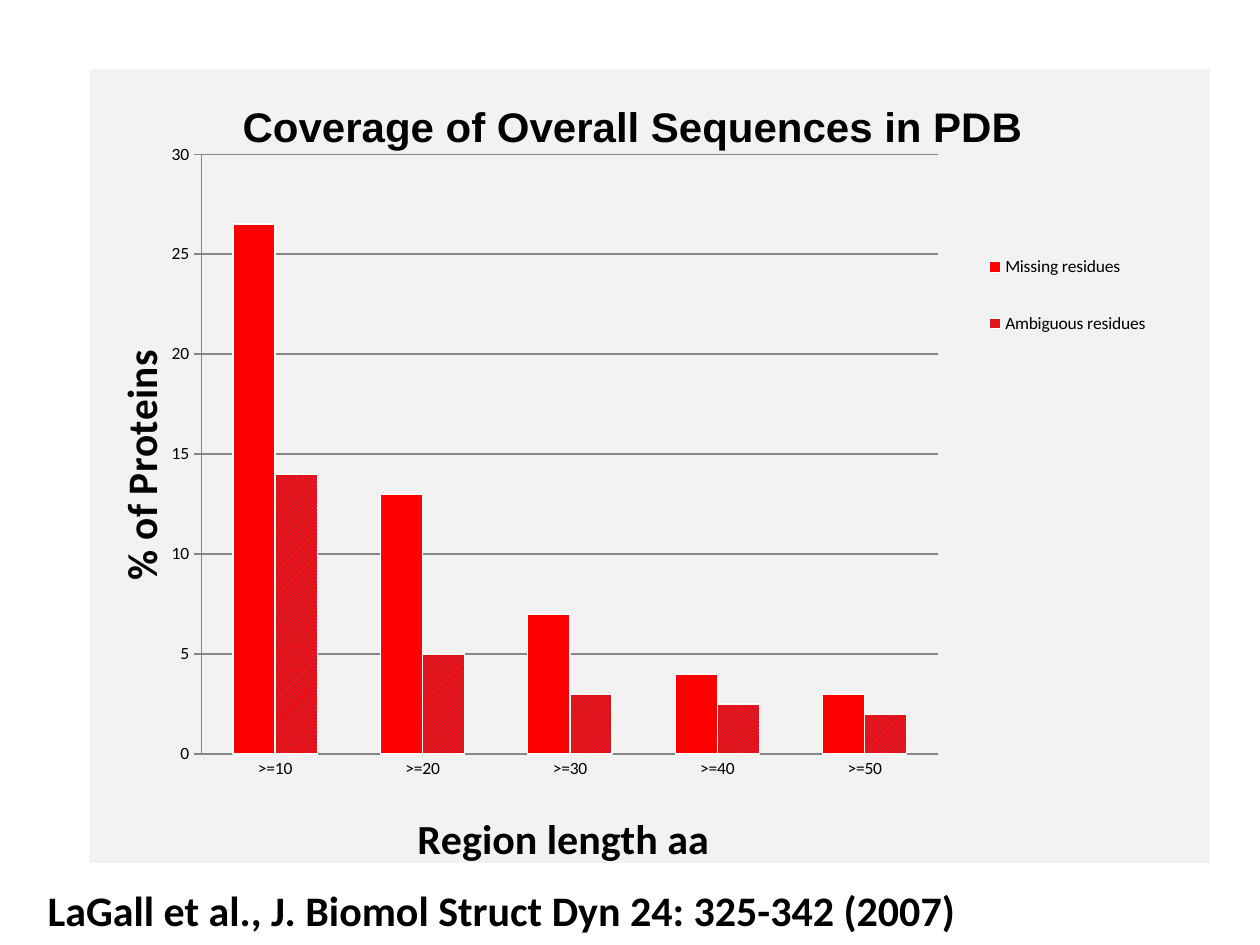
"""Build a slide charting disordered-region coverage in PDB, with its citation."""
from lxml import etree
from pptx import Presentation
from pptx import util as u
from pptx.chart import data as chart_data
from pptx.dml.color import RGBColor
from pptx.enum import chart as ec, dml, text
from pptx.oxml import ns

COLORS = {"text": "000000", "panel": "F2F2F2", "grid": "868686",
          "bar": "FF0000", "hatch": "4F81BD", "edge": "FFFFFF"}
HEADING = {"size": u.Pt(24), "bold": True, "name": "Calibri"}
LABEL = {"size": u.Pt(10), "bold": False, "name": "Calibri"}
REGION_LENGTHS = [">=10", ">=20", ">=30", ">=40", ">=50"]
COVERAGE = {"Missing residues": (26.5, 13, 7, 4, 3),
            "Ambiguous residues ": (14, 5, 3, 2.5, 2)}


def rgb(key):
    return RGBColor.from_string(COLORS[key])


def set_attributes(target, values):
    for name, value in values.items():
        setattr(target, name, value)


def style_font(font, values):
    set_attributes(font, values)
    font.color.rgb = rgb("text")


def style_line(line, key):
    line.color.rgb = rgb(key)
    line.width = u.Pt(0.75)


def place(part, **position):
    for previous in part.findall(ns.qn("c:layout")):
        part.remove(previous)
    layout = etree.Element(ns.qn("c:layout"))
    manual = etree.SubElement(layout, ns.qn("c:manualLayout"))
    for tag, value in position.items():
        etree.SubElement(manual, ns.qn(f"c:{tag}")).set("val", str(value))
    overlay = part.find(ns.qn("c:overlay"))
    if overlay is None:
        part.insert(0, layout)
    else:
        overlay.addprevious(layout)


def add_title(owner, wording, x, y, **changes):
    owner.has_title = True
    title = owner.chart_title if hasattr(owner, "chart_title") else owner.axis_title
    title.text_frame.text = wording
    style_font(title.text_frame.paragraphs[0].runs[0].font, {**HEADING, **changes})
    place(title.text_frame._element.getparent().getparent().getparent()
          if not hasattr(title, "element") else title.element,
          xMode="edge", yMode="edge", x=x, y=y)


def fill_panel(chart):
    panel = etree.Element(ns.qn("c:spPr"))
    solid = etree.SubElement(panel, ns.qn("a:solidFill"))
    etree.SubElement(solid, ns.qn("a:srgbClr")).set("val", COLORS["panel"])
    outline = etree.SubElement(panel, ns.qn("a:ln"))
    etree.SubElement(outline, ns.qn("a:noFill"))
    chart.element.find(ns.qn("c:txPr")).addprevious(panel)


def style_bars(plot):
    set_attributes(plot, {"gap_width": 150, "overlap": 0, "vary_by_categories": False})
    missing, ambiguous = plot.series
    missing.format.fill.solid()
    missing.format.fill.fore_color.rgb = rgb("bar")
    hatch = ambiguous.format.fill
    hatch.patterned()
    hatch.pattern = dml.MSO_PATTERN.DARK_UPWARD_DIAGONAL
    hatch.fore_color.rgb = rgb("hatch")
    hatch.back_color.rgb = rgb("bar")
    for bars in (missing, ambiguous):
        bars.invert_if_negative = False
        style_line(bars.format.line, "edge")


def style_axes(chart):
    lengths, percent = chart.category_axis, chart.value_axis
    set_attributes(lengths, {"major_tick_mark": ec.XL_TICK_MARK.NONE,
                             "has_major_gridlines": False})
    set_attributes(percent, {"major_tick_mark": ec.XL_TICK_MARK.CROSS,
                             "has_major_gridlines": True, "minimum_scale": 0,
                             "maximum_scale": 30, "major_unit": 5})
    for line in (lengths.format.line, percent.format.line,
                 percent.major_gridlines.format.line):
        style_line(line, "grid")
    add_title(lengths, "Region length aa", 0.286, 0.925)
    add_title(percent, "% of Proteins", 0.014, 0.35)


def add_coverage_chart(slide):
    coverage = chart_data.CategoryChartData()
    coverage.categories = REGION_LENGTHS
    for name, values in COVERAGE.items():
        coverage.add_series(name, values)
    chart = slide.shapes.add_chart(
        ec.XL_CHART_TYPE.COLUMN_CLUSTERED, u.Pt(51.12), u.Pt(39.6),
        u.Pt(640.08), u.Pt(462.24), coverage).chart
    style_font(chart.font, LABEL)
    fill_panel(chart)
    add_title(chart, "Coverage of Overall Sequences in PDB", 0.13, 0.03, name="Arial")
    style_bars(chart.plots[0])
    style_axes(chart)
    chart.has_legend = True
    set_attributes(chart.legend, {"position": ec.XL_LEGEND_POSITION.RIGHT,
                                  "include_in_layout": False})
    root = chart.element
    place(root.find(".//" + ns.qn("c:legend")), xMode="edge", yMode="edge",
          x=0.78, y=0.19, w=0.19, h=0.19)
    place(root.find(".//" + ns.qn("c:plotArea")), layoutTarget="inner",
          xMode="edge", yMode="edge", x=0.1, y=0.107, w=0.658, h=0.756)


def add_citation(slide, wording):
    frame = slide.shapes.add_textbox(
        u.Pt(20.16), u.Pt(501.84), u.Pt(547.92), u.Pt(36)).text_frame
    set_attributes(frame, {"word_wrap": False,
                           "auto_size": text.MSO_AUTO_SIZE.SHAPE_TO_FIT_TEXT})
    citation = frame.paragraphs[0].add_run()
    citation.text = wording
    style_font(citation.font, HEADING)


def main():
    deck = Presentation()
    set_attributes(deck, {"slide_width": u.Pt(720), "slide_height": u.Pt(540)})
    slide = deck.slides.add_slide(deck.slide_layouts[6])
    add_coverage_chart(slide)
    add_citation(slide, "LaGall et al., J. Biomol Struct Dyn 24: 325-342 (2007)")
    deck.save("out.pptx")


if __name__ == "__main__":
    main()
